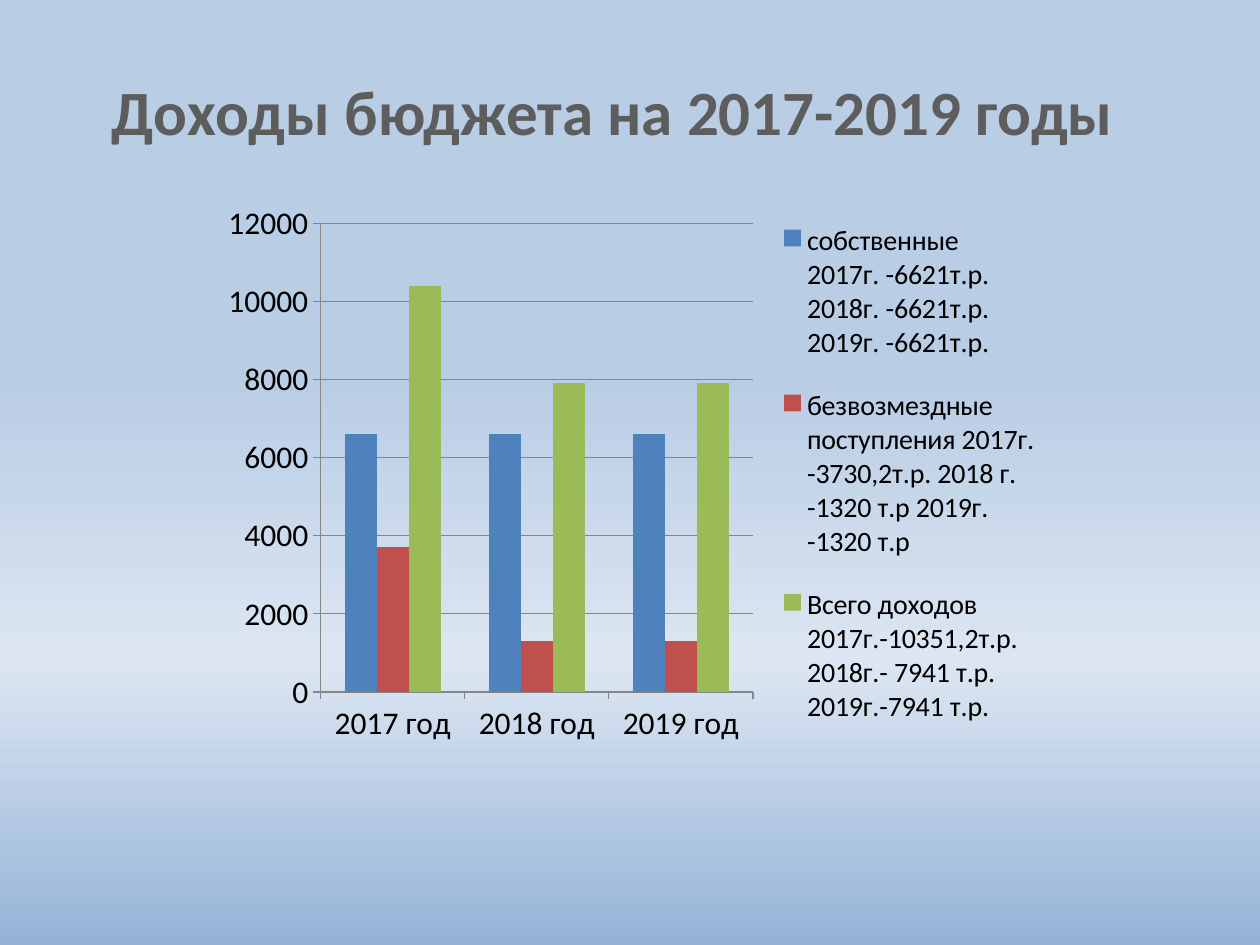
from lxml import etree
from pptx import Presentation
from pptx.chart.data import CategoryChartData
from pptx.dml.color import RGBColor
from pptx.enum.chart import XL_CHART_TYPE, XL_LEGEND_POSITION, XL_TICK_MARK
from pptx.enum.text import MSO_ANCHOR, PP_ALIGN
from pptx.oxml import parse_xml
from pptx.oxml.ns import nsdecls, qn
from pptx.util import Cm, Pt

COLUMNS = XL_CHART_TYPE.COLUMN_CLUSTERED
RIGHT = XL_LEGEND_POSITION.RIGHT
OUTSIDE = XL_TICK_MARK.OUTSIDE
CENTER = PP_ALIGN.CENTER
MIDDLE = MSO_ANCHOR.MIDDLE
FONT = "Calibri"


def rgb(color):
    return RGBColor.from_string(color)


def add_text(s, text, left, top, width, height, size, color, bold=False, align=CENTER):
    tf = s.shapes.add_textbox(Cm(left), Cm(top), Cm(width), Cm(height)).text_frame
    tf.word_wrap = False
    tf.vertical_anchor = MIDDLE
    p = tf.paragraphs[0]
    p.alignment = align
    r = p.add_run()
    r.text = text
    r.font.name, r.font.size, r.font.bold = FONT, Pt(size), bold
    r.font.color.rgb = rgb(color)


prs = Presentation()
prs.slide_width, prs.slide_height = Cm(25.4), Cm(19.05)
s = prs.slides.add_slide(prs.slide_layouts[6])

# Background: vertical gradient with four stops
fill = s.background.fill
fill.gradient()
fill.gradient_angle = 270
stops = s.background._cSld.find(".//" + qn("a:gsLst"))
for stop in list(stops):
    stops.remove(stop)
for pos, color in [(0, "B9CDE5"), (40, "B9CDE5"), (70, "DCE6F2"), (100, "95B3D7")]:
    gs = etree.SubElement(stops, qn("a:gs"), pos=str(pos * 1000))
    etree.SubElement(gs, qn("a:srgbClr"), val=color)

# Chart data; each series name carries its yearly figures
series = [
    ("собственные\n2017г. -6621т.р.\n2018г. -6621т.р.\n2019г. -6621т.р.",
     (6600, 6600, 6600), "4F81BD"),
    ("безвозмездные\nпоступления 2017г.\n-3730,2т.р. 2018 г.\n-1320 т.р 2019г.\n-1320 т.р",
     (3700, 1300, 1300), "C0504D"),
    ("Всего доходов\n2017г.-10351,2т.р.\n2018г.- 7941 т.р.\n2019г.-7941 т.р.",
     (10400, 7900, 7900), "9BBB59"),
]
data = CategoryChartData()
data.categories = ["2017 год", "2018 год", "2019 год"]
for name, values, _ in series:
    data.add_series(name, values)

# Column chart
chart = s.shapes.add_chart(COLUMNS, Cm(4.24), Cm(3.94), Cm(18.54), Cm(11.25), data).chart
chart.has_title = False
plot = chart.plots[0]
plot.gap_width = 150
plot.overlap = 0
plot.vary_by_categories = False
for ser, (_, _, color) in zip(plot.series, series):
    ser.format.fill.solid()
    ser.format.fill.fore_color.rgb = rgb(color)

# Axes and gridlines
value_axis = chart.value_axis
value_axis.minimum_scale, value_axis.maximum_scale, value_axis.major_unit = 0, 12000, 2000
value_axis.has_major_gridlines = True
for axis in (chart.category_axis, value_axis):
    axis.major_tick_mark = OUTSIDE
for part in (chart.category_axis, value_axis, value_axis.major_gridlines):
    part.format.line.color.rgb = rgb("868686")
    part.format.line.width = Pt(0.75)

# Legend and chart fonts
chart.has_legend = True
chart.legend.position = RIGHT
chart.legend.include_in_layout = False
for font, size in ((chart.font, 18), (chart.legend.font, 16)):
    font.name, font.size, font.bold = FONT, Pt(size), False
    font.color.rgb = rgb("000000")

# Fixed places of plot area and legend, as fractions of the chart
plot_area = chart._chartSpace.find(".//" + qn("c:plotArea"))
legend = chart._chartSpace.find(".//" + qn("c:legend"))
INNER = '<c:layoutTarget val="inner"/>'
for el, index, target, box in [
    (plot_area, 0, INNER, (0.12, 0.05, 0.47, 0.84)),
    (legend, 1, "", (0.57, 0, 0.38, 1)),
]:
    for old in el.findall(qn("c:layout")):
        el.remove(old)
    sizes = "".join(f'<c:{k} val="{v}"/>' for k, v in zip("xywh", box))
    el.insert(index, parse_xml(
        f'<c:layout {nsdecls("c")}><c:manualLayout>{target}<c:xMode val="edge"/>'
        f'<c:yMode val="edge"/>{sizes}</c:manualLayout></c:layout>'))

# Title
add_text(s, "Доходы бюджета на 2017-2019 годы", 1.93, 1.32, 20.83, 1.8,
         size=36, color="5D5D5D", bold=True)

prs.save("out.pptx")
